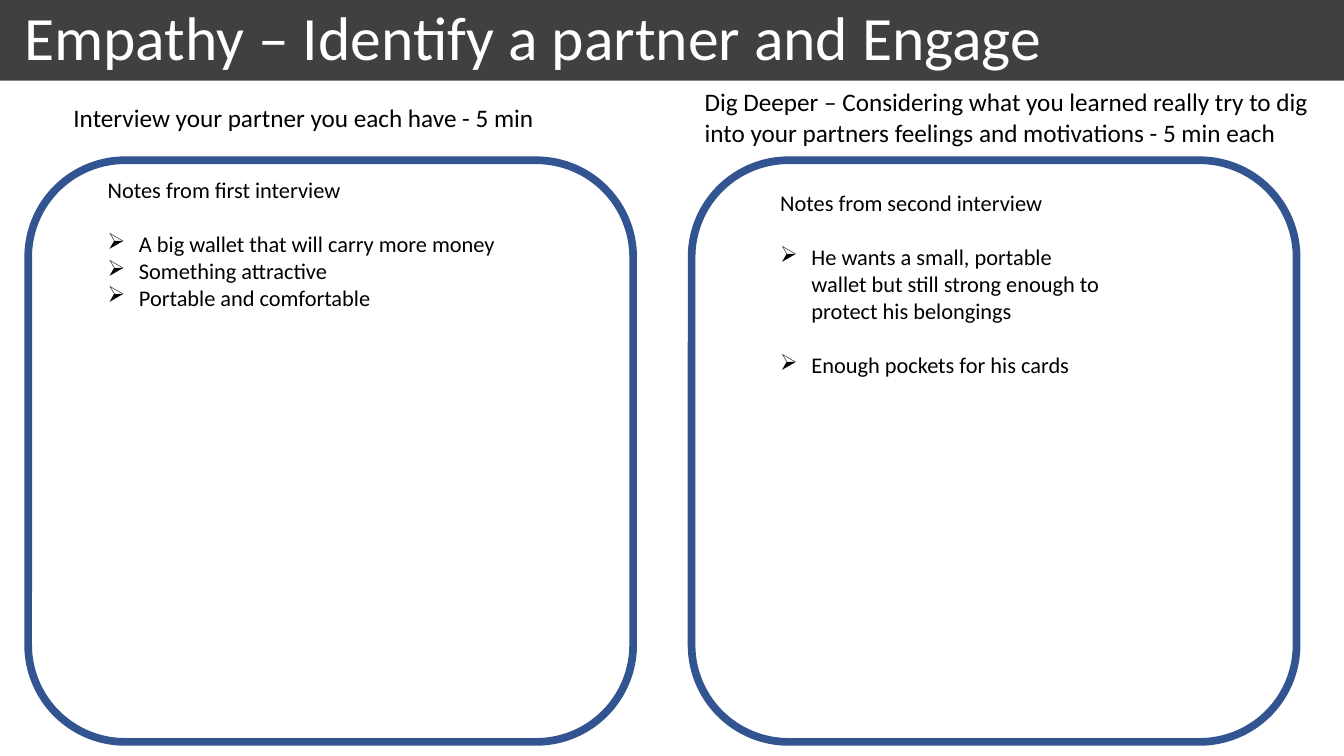
from lxml import etree
from pptx import Presentation
from pptx.dml.color import RGBColor
from pptx.enum.shapes import MSO_SHAPE
from pptx.enum.text import MSO_ANCHOR, PP_ALIGN
from pptx.oxml.ns import qn
from pptx.util import Inches, Pt

# Content: boxes are (offset from column left, top, width, height) in inches
TITLE = "Empathy – Identify a partner and Engage"
COLUMNS = [
    {
        "prompt": "Interview your partner you each have - 5 min",
        "prompt_box": (0.35, 0.97, 5.81, 0.4),
        "heading": "Notes from first interview",
        "notes": [
            "A big wallet that will carry more money",
            "Something attractive",
            "Portable and comfortable",
        ],
        "notes_box": (0.69, 1.7, 4.05, 2.26),
        "note_gap": 0,
    },
    {
        "prompt": "Dig Deeper – Considering what you learned really try to dig "
                  "into your partners feelings and motivations - 5 min each",
        "prompt_box": (0.03, 0.81, 6.28, 0.71),
        "heading": "Notes from second interview",
        "notes": [
            "He wants a small, portable wallet but still strong enough to "
            "protect his belongings",
            "Enough pockets for his cards",
        ],
        "notes_box": (0.78, 1.83, 3.38, 1.99),
        "note_gap": 1,
    },
]
COLORS = {"bar": "404040", "title": "FFFFFF", "panel": "325491", "text": "000000"}
FONT = "Calibri"

# Grid
SLIDE_WIDTH, SLIDE_HEIGHT = 13.33, 7.5
BAR_HEIGHT = 0.8
COLUMN_LEFT, COLUMN_STEP = 0.28, 6.58
PANEL_TOP, PANEL_WIDTH, PANEL_HEIGHT = 1.59, 6, 5.77
NOTE_LINE = Pt(19.5)
BULLET_INDENT = Inches(0.31)


def color(name):
    return RGBColor.from_string(COLORS[name])


def add_shape(slide, kind, *box):
    shape = slide.shapes.add_shape(kind, *map(Inches, box))
    shape.shadow.inherit = False
    return shape


def format_paragraph(paragraph, size, color_name):
    paragraph.alignment = PP_ALIGN.LEFT
    for run in paragraph.runs:
        run.font.name = FONT
        run.font.size = Pt(size)
        run.font.color.rgb = color(color_name)


def add_text(slide, left, box, lines, size):
    offset, top, width, height = box
    text_box = slide.shapes.add_textbox(
        *map(Inches, (left + offset, top, width, height)))
    text_frame = text_box.text_frame
    text_frame.word_wrap = True
    text_frame.text = "\n".join(lines)
    for paragraph in text_frame.paragraphs:
        format_paragraph(paragraph, size, "text")
    return text_frame.paragraphs


def add_bullet(paragraph):
    properties = paragraph._p.get_or_add_pPr()
    properties.set("marL", str(BULLET_INDENT))
    properties.set("indent", str(-BULLET_INDENT))
    etree.SubElement(properties, qn("a:buFont"), typeface="Wingdings")
    etree.SubElement(properties, qn("a:buChar"), char="Ø")


presentation = Presentation()
presentation.slide_width = Inches(SLIDE_WIDTH)
presentation.slide_height = Inches(SLIDE_HEIGHT)
slide = presentation.slides.add_slide(presentation.slide_layouts[6])

# Title bar
bar = add_shape(slide, MSO_SHAPE.RECTANGLE, 0, 0, SLIDE_WIDTH, BAR_HEIGHT)
bar.fill.solid()
bar.fill.fore_color.rgb = color("bar")
bar.line.fill.background()
title_frame = bar.text_frame
title_frame.text = TITLE
title_frame.vertical_anchor = MSO_ANCHOR.MIDDLE
title_frame.margin_left = Inches(0.24)
title_frame.paragraphs[0].line_spacing = 0.9
format_paragraph(title_frame.paragraphs[0], 44, "title")

# Interview columns
for index, column in enumerate(COLUMNS):
    left = COLUMN_LEFT + index * COLUMN_STEP
    panel = add_shape(slide, MSO_SHAPE.ROUNDED_RECTANGLE,
                      left, PANEL_TOP, PANEL_WIDTH, PANEL_HEIGHT)
    panel.fill.background()
    panel.line.color.rgb = color("panel")
    panel.line.width = Pt(5.5)

    add_text(slide, left, column["prompt_box"], [column["prompt"]], 18)

    heading, *notes = add_text(slide, left, column["notes_box"],
                               [column["heading"], *column["notes"]], 16)
    heading.space_after = NOTE_LINE
    for note in notes:
        note.space_after = NOTE_LINE * column["note_gap"]
        add_bullet(note)

presentation.save("out.pptx")
